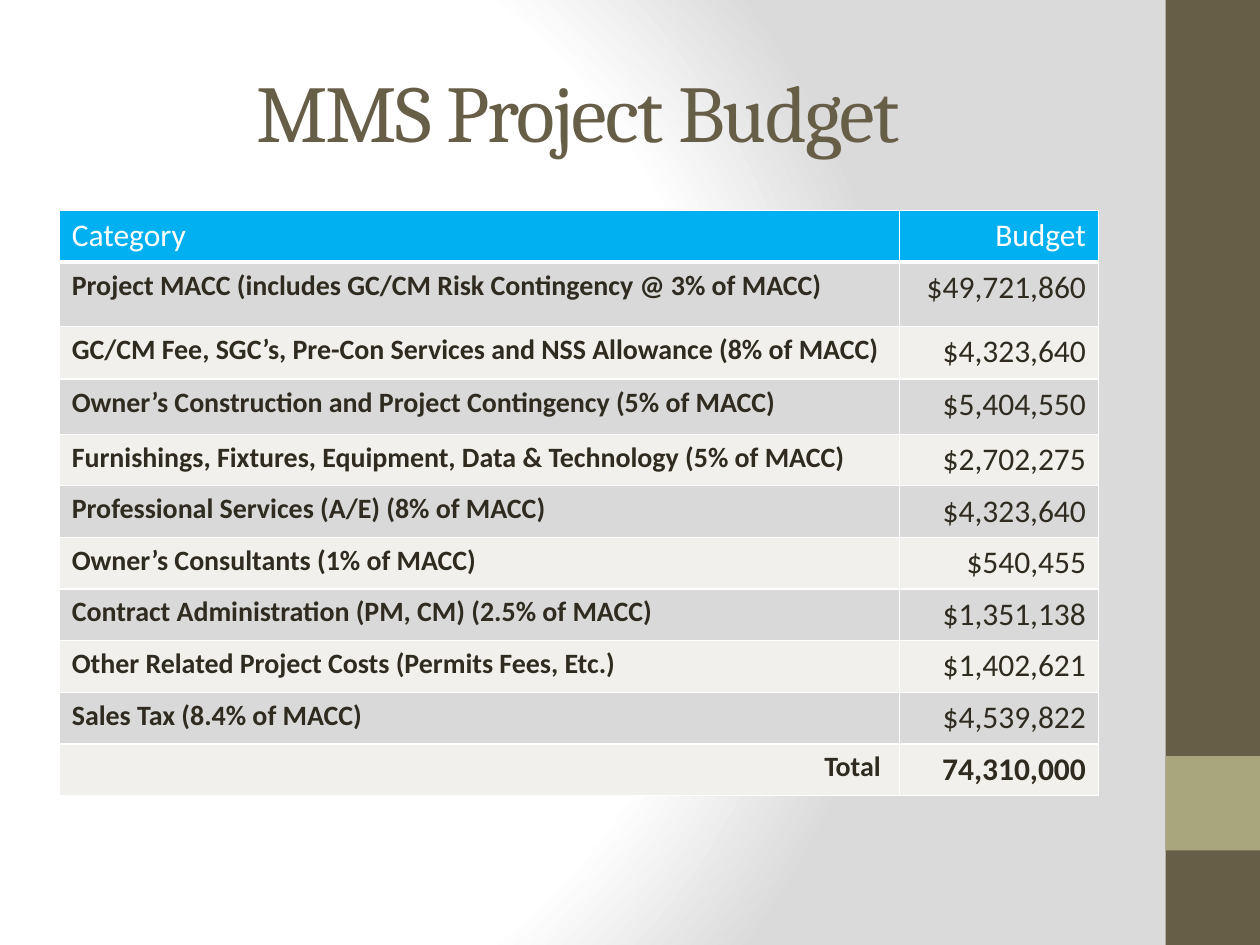
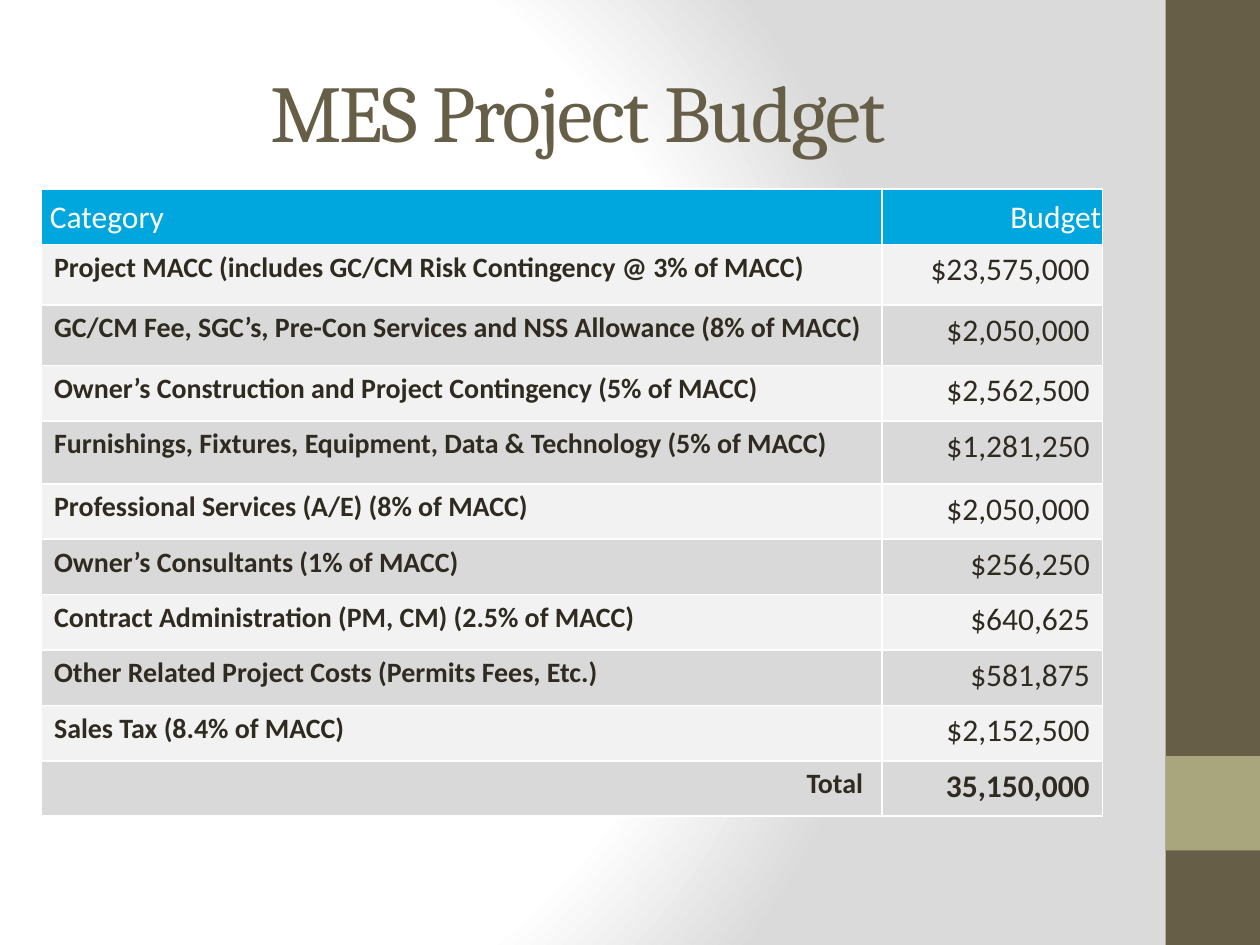
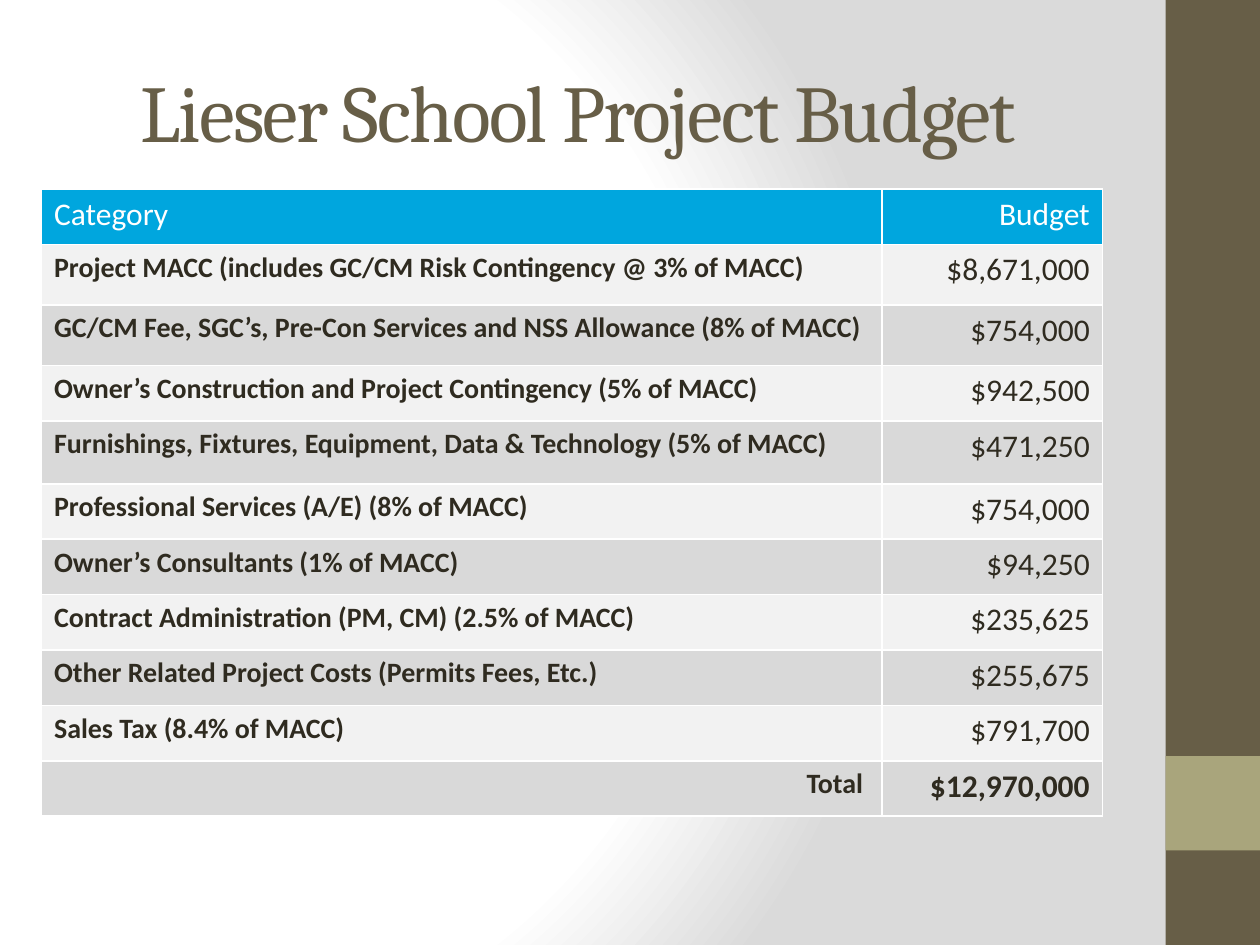
from lxml import etree
from pptx import Presentation
from pptx.dml.color import RGBColor
from pptx.enum.shapes import MSO_SHAPE
from pptx.enum.text import MSO_ANCHOR, PP_ALIGN
from pptx.oxml import parse_xml
from pptx.oxml.ns import nsdecls, qn
from pptx.util import Inches, Pt

# Colours and fonts
WHITE = RGBColor(0xFF, 0xFF, 0xFF)
BROWN = RGBColor(0x67, 0x5E, 0x47)
OLIVE = RGBColor(0xA9, 0xA5, 0x7C)
INK = RGBColor(0x2F, 0x2B, 0x20)
SKY = RGBColor(0x00, 0xB0, 0xF0)
BLUE = RGBColor(0x00, 0xA6, 0xDE)
GREY = RGBColor(0xD9, 0xD9, 0xD9)
CREAM = RGBColor(0xF1, 0xF0, 0xEC)
PALE = RGBColor(0xF2, 0xF2, 0xF2)
HEAD_FONT, BODY_FONT = "Cambria", "Calibri"

# Table content
CATEGORIES = [
    "Project MACC (includes GC/CM Risk Contingency @ 3% of MACC)",
    "GC/CM Fee, SGC’s, Pre-Con Services and NSS Allowance (8% of MACC)",
    "Owner’s Construction and Project Contingency (5% of MACC)",
    "Furnishings, Fixtures, Equipment, Data & Technology (5% of MACC)",
    "Professional Services (A/E) (8% of MACC)",
    "Owner’s Consultants (1% of MACC)",
    "Contract Administration (PM, CM) (2.5% of MACC)",
    "Other Related Project Costs (Permits Fees, Etc.)",
    "Sales Tax (8.4% of MACC)",
    "Total ",
]
MMS_LAYOUT = dict(left=0.47, top=1.67, cols=[6.67, 1.58], header=SKY, bands=[GREY, CREAM],
                  heights=[0.41, 0.51, 0.42, 0.44, 0.39] + [0.41] * 6, header_rule=3)
WIDE_LAYOUT = dict(left=0.33, top=1.5, cols=[6.67, 1.75], header=BLUE, bands=[PALE, GREY],
                   heights=[0.44, 0.48, 0.48, 0.44, 0.5] + [0.44] * 6, header_rule=1)
BUDGETS = [
    dict(MMS_LAYOUT, title="MMS Project Budget", heading="Category", tight_header=False,
         amounts=["$49,721,860", "$4,323,640", "$5,404,550", "$2,702,275", "$4,323,640",
                  "$540,455", "$1,351,138", "$1,402,621", "$4,539,822", "74,310,000"]),
    dict(WIDE_LAYOUT, title="MES Project Budget", heading=" Category", tight_header=True,
         amounts=["$23,575,000", "$2,050,000", "$2,562,500", "$1,281,250", "$2,050,000",
                  "$256,250", "$640,625", "$581,875", "$2,152,500", "35,150,000"]),
    dict(WIDE_LAYOUT, title="Lieser School Project Budget", heading="Category", tight_header=False,
         amounts=["$8,671,000", "$754,000", "$942,500", "$471,250", "$754,000",
                  "$94,250", "$235,625", "$255,675", "$791,700", "$12,970,000"]),
]


def write(tf, text, size=18, font=BODY_FONT, color=INK, bold=False, align=PP_ALIGN.LEFT):
    p = tf.paragraphs[0]
    p.alignment = align
    r = p.add_run()
    r.text = text
    r.font.size, r.font.name, r.font.bold = Pt(size), font, bold
    r.font.color.rgb = color
    return r


def add_borders(cell, bottom=1, top=1):
    tcPr = cell._tc.get_or_add_tcPr()
    for side, width in (("L", 1), ("R", 1), ("T", top), ("B", bottom)):
        ln = etree.SubElement(tcPr, qn(f"a:ln{side}"), w=str(Pt(width)))
        fill = etree.SubElement(ln, qn("a:solidFill"))
        etree.SubElement(fill, qn("a:srgbClr"), val=str(WHITE))


prs = Presentation()
prs.slide_width, prs.slide_height = Inches(10), Inches(7.5)
layout = prs.slide_layouts.get_by_name("Title Only")
master = prs.slide_master

# Shared background
cSld = master.element.cSld
cSld.remove(cSld.find(qn("p:bg")))
cSld.insert(0, parse_xml(
    f'<p:bg {nsdecls("p", "a")}><p:bgPr><a:gradFill rotWithShape="1"><a:gsLst>'
    '<a:gs pos="0"><a:srgbClr val="FFFFFF"/></a:gs>'
    '<a:gs pos="75000"><a:srgbClr val="FFFFFF"/></a:gs>'
    '<a:gs pos="100000"><a:srgbClr val="DADADA"/></a:gs></a:gsLst>'
    '<a:path path="circle"><a:fillToRect l="20000" t="50000" r="100000" b="50000"/></a:path>'
    '</a:gradFill><a:effectLst/></p:bgPr></p:bg>'))

for number, budget in enumerate(BUDGETS):
    s = prs.slides.add_slide(layout)

    # Side bands, drawn once and moved to the master
    if number == 0:
        for index, (top, height, color) in enumerate([(0, 7.5, BROWN), (6, 0.75, OLIVE)]):
            band = s.shapes.add_shape(MSO_SHAPE.RECTANGLE, Inches(9.25), Inches(top),
                                      Inches(0.75), Inches(height))
            band.shadow.inherit = False
            band.fill.solid()
            band.fill.fore_color.rgb = color
            band.line.fill.background()
            master.shapes.element.insert(2 + index, band.element)

    # Title
    title = s.shapes.title
    title.left, title.top = Inches(0.42), Inches(0.25)
    title.width, title.height = Inches(8.33), Inches(1.25)
    title.text_frame.vertical_anchor = MSO_ANCHOR.MIDDLE
    r = write(title.text_frame, budget["title"], size=46, font=HEAD_FONT, color=BROWN,
              align=PP_ALIGN.CENTER)
    r.font._element.set("spc", "-100")

    # Budget table
    rows = [(budget["heading"], "Budget"), *zip(CATEGORIES, budget["amounts"])]
    table = s.shapes.add_table(len(rows), 2, Inches(budget["left"]), Inches(budget["top"]),
                               Inches(sum(budget["cols"])), Inches(sum(budget["heights"]))).table
    table.horz_banding = False
    for column, width in zip(table.columns, budget["cols"]):
        column.width = Inches(width)
    for i, row in enumerate(rows):
        table.rows[i].height = Inches(budget["heights"][i])
        is_header, is_total = i == 0, i == len(rows) - 1
        for j, text in enumerate(row):
            cell = table.cell(i, j)
            add_borders(cell, bottom=budget["header_rule"] if is_header else 1,
                        top=budget["header_rule"] if i == 1 else 1)
            cell.fill.solid()
            cell.fill.fore_color.rgb = budget["header"] if is_header else budget["bands"][(i - 1) % 2]
            if is_header and budget["tight_header"]:
                cell.vertical_anchor = MSO_ANCHOR.MIDDLE
                cell.margin_left = cell.margin_right = cell.margin_top = Inches(0.01)
                cell.margin_bottom = 0
            write(cell.text_frame, text,
                  size=18 if is_header or j == 1 else 16,
                  color=WHITE if is_header else INK,
                  bold=not is_header and (j == 0 or is_total),
                  align=PP_ALIGN.RIGHT if j == 1 or is_total else PP_ALIGN.LEFT)

prs.save("out.pptx")
